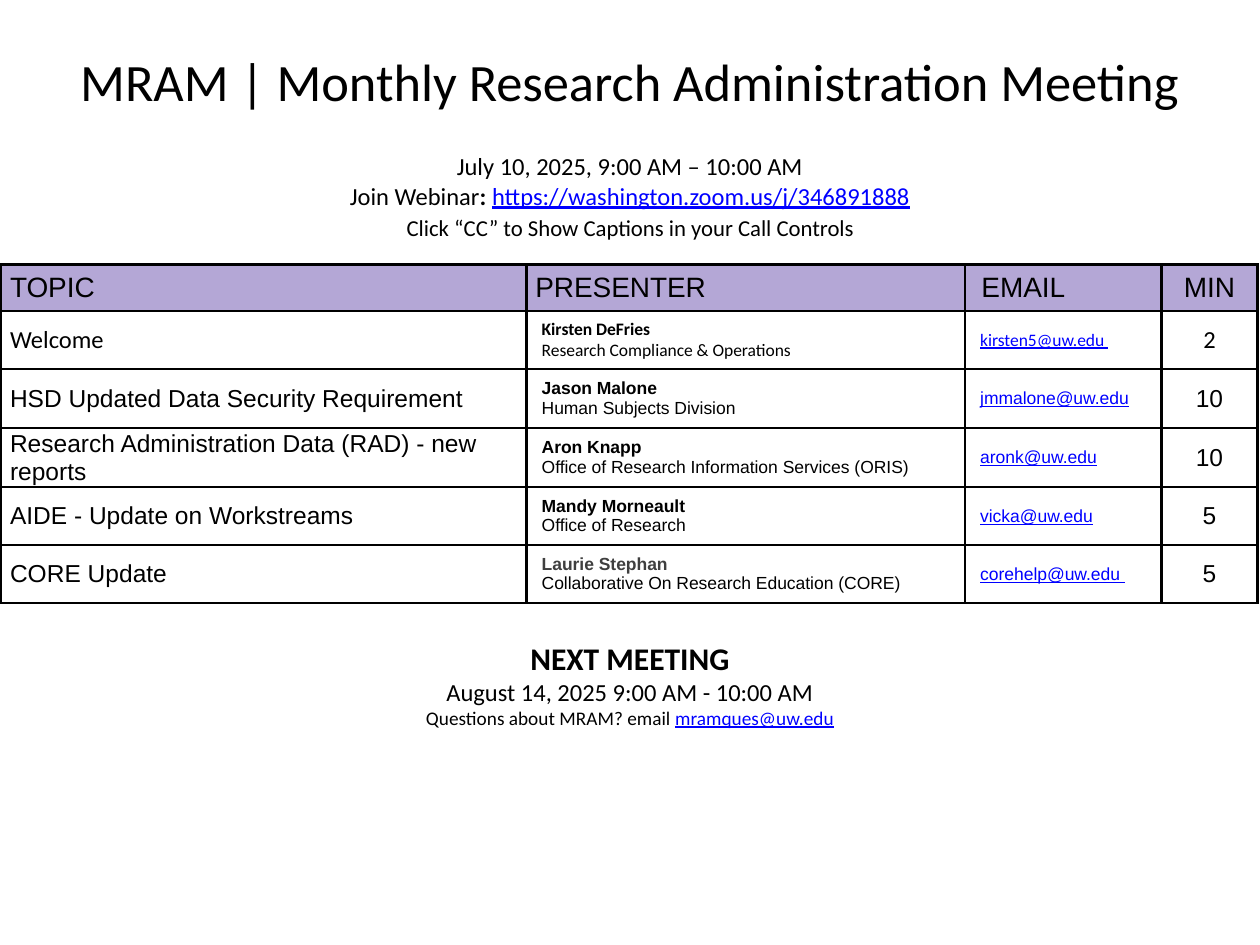
from pptx import Presentation
from pptx.dml.color import RGBColor
from pptx.enum.text import MSO_ANCHOR as Anchor, PP_ALIGN as Align
from pptx.oxml.ns import qn
from pptx.util import Inches, Pt
from lxml.etree import SubElement

BLACK = RGBColor(0x00, 0x00, 0x00)
WHITE = RGBColor(0xFF, 0xFF, 0xFF)
GRAY = RGBColor(0x3F, 0x3F, 0x3F)
LINK = RGBColor(0x00, 0x00, 0xFF)
LILAC = RGBColor(0xB4, 0xA7, 0xD6)

COLUMN_WIDTHS = [4.17, 3.48, 1.56, 0.76]
ROW_HEIGHTS = [0.37, 0.46, 0.47, 0.46, 0.46, 0.46]
HEADERS = ["TOPIC", "PRESENTER", "EMAIL", "MIN"]
# topic, presenter, unit, email, minutes, font, name colour
AGENDA = [
    ("Welcome", "Kirsten DeFries", "Research Compliance & Operations",
     "kirsten5@uw.edu ", "2", "Calibri", BLACK),
    ("HSD Updated Data Security Requirement", "Jason Malone",
     "Human Subjects Division", "jmmalone@uw.edu", "10", "Arial", BLACK),
    ("Research Administration Data (RAD) - new reports", "Aron Knapp",
     "Office of Research Information Services (ORIS)",
     "aronk@uw.edu", "10", "Arial", BLACK),
    ("AIDE - Update on Workstreams", "Mandy Morneault",
     "Office of Research", "vicka@uw.edu", "5", "Arial", BLACK),
    ("CORE Update", "Laurie Stephan",
     "Collaborative On Research Education (CORE)",
     "corehelp@uw.edu ", "5", "Arial", GRAY),
]


def add_run(paragraph, text, size, font="Calibri", color=BLACK, bold=False, underline=False):
    run = paragraph.add_run()
    run.text = text
    run.font.size = Pt(size)
    run.font.name = font
    run.font.color.rgb = color
    run.font.bold = bold
    run.font.underline = underline


def add_link(paragraph, text, size, font="Calibri"):
    add_run(paragraph, text, size, font, LINK, underline=True)


def add_centered_box(slide, left, top, width, height, line_count):
    """Add a text box and return its centred paragraphs."""
    shape = slide.shapes.add_textbox(Inches(left), Inches(top), Inches(width), Inches(height))
    frame = shape.text_frame
    frame.word_wrap = True
    frame.margin_left = frame.margin_right = Inches(0.1)
    frame.margin_top = frame.margin_bottom = Inches(0.1)
    for _ in range(line_count - 1):
        frame.add_paragraph()
    for paragraph in frame.paragraphs:
        paragraph.alignment = Align.CENTER
    return frame.paragraphs


def add_title(slide, *box):
    [title] = add_centered_box(slide, *box, 1)
    add_run(title, "MRAM | Monthly Research Administration Meeting", 30)


def add_meeting_details(slide, *box):
    date, webinar, captions = add_centered_box(slide, *box, 3)
    add_run(date, "July 10, 2025, 9:00 AM – 10:00 AM", 14)
    add_run(webinar, "Join Webinar", 14)
    add_run(webinar, ": ", 14, bold=True)
    add_link(webinar, "https://washington.zoom.us/j/346891888", 14)
    captions.line_spacing = 1.15
    add_run(captions, "Click “CC” to Show Captions in your Call Controls", 13)


def add_next_meeting(slide, *box):
    heading, date, questions = add_centered_box(slide, *box, 3)
    add_run(heading, "NEXT MEETING", 18, bold=True)
    add_run(date, "August 14, 2025 9:00 AM - 10:00 AM", 14)
    add_run(questions, "Questions about MRAM? email ", 11)
    add_link(questions, "mramques@uw.edu", 11)


def format_cell(cell, fill, margin):
    """Set fill, margins and borders, and return the first paragraph."""
    cell.vertical_anchor = Anchor.MIDDLE
    cell.margin_left = cell.margin_right = Inches(margin)
    cell.margin_top = cell.margin_bottom = 0
    properties = cell._tc.get_or_add_tcPr()
    for side in ("a:lnL", "a:lnR", "a:lnT", "a:lnB"):
        line = SubElement(properties, qn(side), w=str(Pt(1.5)))
        solid = SubElement(line, qn("a:solidFill"))
        SubElement(solid, qn("a:srgbClr"), val=str(BLACK))
    cell.fill.solid()
    cell.fill.fore_color.rgb = fill
    return cell.text_frame.paragraphs[0]


def add_agenda(slide, left, top):
    frame = slide.shapes.add_table(
        len(ROW_HEIGHTS), len(COLUMN_WIDTHS), Inches(left), Inches(top),
        Inches(sum(COLUMN_WIDTHS)), Inches(sum(ROW_HEIGHTS)))
    table = frame.table
    for column, width in zip(table.columns, COLUMN_WIDTHS):
        column.width = Inches(width)
    for row, height in zip(table.rows, ROW_HEIGHTS):
        row.height = Inches(height)

    # Header row
    for index, header in enumerate(HEADERS):
        paragraph = format_cell(table.cell(0, index), LILAC, 0.13 if header == "EMAIL" else 0.07)
        add_run(paragraph, header, 16, "Arial")
        if header == "MIN":
            paragraph.alignment = Align.CENTER

    # Agenda rows
    for index, (topic, name, unit, email, minutes, font, name_color) in enumerate(AGENDA, 1):
        cells = [table.cell(index, column) for column in range(len(HEADERS))]
        paragraphs = [format_cell(cell, WHITE, margin)
                      for cell, margin in zip(cells, (0.07, 0.12, 0.12, 0.07))]
        add_run(paragraphs[0], topic, 14, font)
        add_run(paragraphs[1], name, 10, font, name_color, bold=True)
        add_run(cells[1].text_frame.add_paragraph(), unit, 10, font)
        add_link(paragraphs[2], email, 10, font)
        add_run(paragraphs[3], minutes, 14, font)
        paragraphs[3].alignment = Align.CENTER


def main():
    presentation = Presentation()
    presentation.slide_width = Inches(10)
    presentation.slide_height = Inches(7.5)
    slide = presentation.slides.add_slide(presentation.slide_layouts[6])
    add_title(slide, 0.01, 0.29, 9.98, 0.82)
    add_meeting_details(slide, 0, 1.1, 10, 1)
    add_agenda(slide, 0.01, 2.1)
    add_next_meeting(slide, 0.01, 4.97, 9.98, 0.88)
    presentation.save("out.pptx")


if __name__ == "__main__":
    main()
